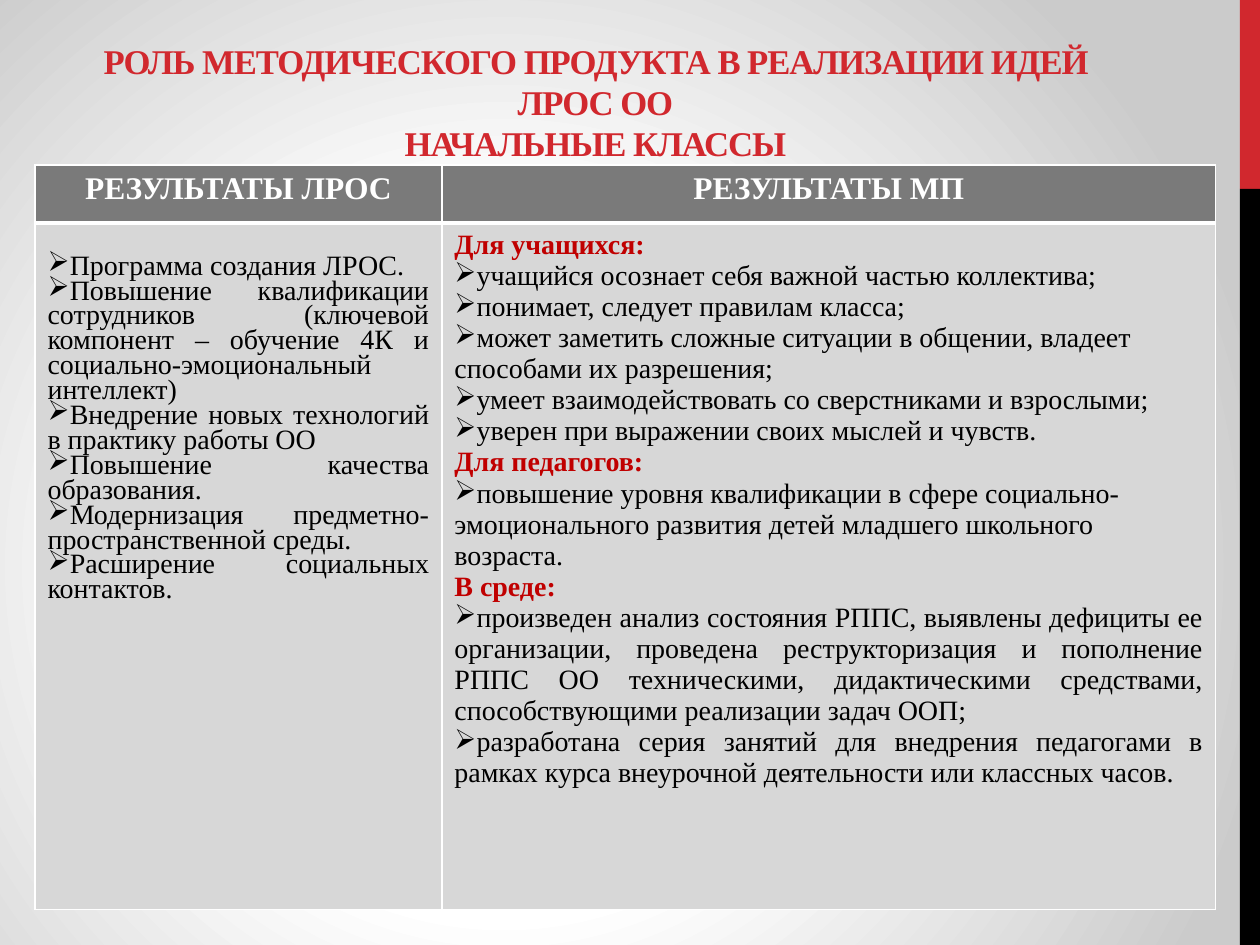
import pptx
import pptx.util
import pptx.dml.color
import pptx.enum.text
import pptx.enum.shapes
import pptx.oxml
import pptx.oxml.ns

Pt = pptx.util.Pt
RGB = pptx.dml.color.RGBColor
ALIGN = pptx.enum.text.PP_ALIGN
qn = pptx.oxml.ns.qn

RED = RGB(0xD1, 0x28, 0x2E)
DEEP = RGB(0xC0, 0x00, 0x00)
BLACK = RGB(0, 0, 0)
WHITE = RGB(0xFF, 0xFF, 0xFF)
GREY = RGB(0x7A, 0x7A, 0x7A)
PALE = RGB(0xD7, 0xD7, 0xD7)
EDGE = RGB(0xCB, 0xCB, 0xCB)
NS = pptx.oxml.ns.nsdecls("a")

FONT = {"name": "Times New Roman"}
TITLE = {**FONT, "size": Pt(19.8), "bold": True}
HEAD = {**FONT, "size": Pt(18), "bold": True}
LABEL = {**FONT, "size": Pt(16), "bold": True}
BODY = {**FONT, "size": Pt(16), "bold": False}

AIMS = [
    "Программа создания ЛРОС.",
    "Повышение квалификации сотрудников (ключевой компонент – обучение 4К "
    "и социально-эмоциональный интеллект)",
    "Внедрение новых технологий в практику работы ОО",
    "Повышение качества образования.",
    "Модернизация предметно-пространственной среды.",
    "Расширение социальных контактов.",
]
# Label, alignment, bulleted items
GROUPS = [
    ("Для учащихся:", ALIGN.LEFT, [
        "учащийся осознает себя важной частью коллектива;",
        "понимает, следует правилам класса;",
        "может заметить сложные ситуации в общении, владеет способами "
        "их разрешения;",
        "умеет взаимодействовать со сверстниками и взрослыми;",
        "уверен при выражении своих мыслей и чувств.",
    ]),
    ("Для педагогов:", ALIGN.LEFT, [
        "повышение уровня квалификации в сфере социально- эмоционального "
        "развития детей младшего школьного возраста.",
    ]),
    ("В среде:", ALIGN.JUSTIFY, [
        "произведен анализ состояния РППС, выявлены дефициты ее организации, "
        "проведена реструкторизация и пополнение РППС ОО техническими, "
        "дидактическими средствами, способствующими реализации задач ООП;",
        "разработана серия занятий для внедрения педагогами в рамках курса "
        "внеурочной деятельности или классных часов.",
    ]),
]


def set_all(item, values):
    for key, value in values.items():
        setattr(item, key, value)


def add_para(frame, text, font, color, align, space=None, bullet=False):
    first = frame.paragraphs[0]
    para = frame.add_paragraph() if first.text else first
    para.text = text
    set_all(para, {"alignment": align, "line_spacing": space})
    for run in para.runs:
        set_all(run.font, font)
        run.font.color.rgb = color
    if bullet:
        props = para._p.get_or_add_pPr()
        props.set("marL", "0")
        props.set("indent", "0")
        props.append(pptx.oxml.parse_xml(f'<a:buChar {NS} char="➢"/>'))
    return para


def paint_back(slide):
    fill = slide.background.fill
    fill.gradient()
    grad = slide.background._cSld.find(".//" + qn("a:gradFill"))
    for child in list(grad):
        grad.remove(child)
    stops = "".join(
        f'<a:gs pos="{pos}"><a:srgbClr val="{color}"/></a:gs>'
        for pos, color in ((0, WHITE), (44000, WHITE), (100000, EDGE)))
    grad.append(pptx.oxml.parse_xml(f"<a:gsLst {NS}>{stops}</a:gsLst>"))
    grad.append(pptx.oxml.parse_xml(
        f'<a:path {NS} path="circle"><a:fillToRect l="40000" t="60000" '
        'r="60000" b="40000"/></a:path>'))


def add_bar(slide, top, height, color):
    bar = slide.shapes.add_shape(
        pptx.enum.shapes.MSO_SHAPE.RECTANGLE,
        Pt(708.5), Pt(top), Pt(11.5), Pt(height))
    bar.shadow.inherit = False
    bar.fill.solid()
    bar.fill.fore_color.rgb = color
    bar.line.fill.background()


def add_title(slide):
    box = slide.shapes.add_textbox(Pt(36.7), Pt(0), Pt(607), Pt(139.7))
    frame = box.text_frame
    set_all(frame, {"word_wrap": True, "margin_bottom": Pt(46),
                    "vertical_anchor": pptx.enum.text.MSO_ANCHOR.BOTTOM})
    para = add_para(
        frame, "РОЛЬ МЕТОДИЧЕСКОГО ПРОДУКТА В РЕАЛИЗАЦИИ ИДЕЙ ЛРОС ОО\v"
        "НАЧАЛЬНЫЕ КЛАССЫ", TITLE, RED, ALIGN.CENTER, Pt(23.7))
    for run in para.runs:
        run._r.get_or_add_rPr().set("spc", "-60")


def style_cell(cell, color, top, bottom):
    props = cell._tc.get_or_add_tcPr()
    for side, width in (("L", 1), ("R", 1), ("T", top), ("B", bottom)):
        props.append(pptx.oxml.parse_xml(
            f'<a:ln{side} {NS} w="{Pt(width)}"><a:solidFill>'
            f'<a:srgbClr val="{WHITE}"/></a:solidFill></a:ln{side}>'))
    cell.fill.solid()
    cell.fill.fore_color.rgb = color


def add_grid(slide):
    grid = slide.shapes.add_table(
        2, 2, Pt(20), Pt(94.3), Pt(674.7), Pt(425.5)).table
    for col, width in zip(grid.columns, (232.5, 442.2)):
        col.width = Pt(width)
    for row, height in zip(grid.rows, (33.1, 392.4)):
        row.height = Pt(height)

    # Header row
    for col, text in enumerate(("РЕЗУЛЬТАТЫ ЛРОС", "РЕЗУЛЬТАТЫ МП")):
        cell = grid.cell(0, col)
        style_cell(cell, GREY, 1, 3)
        add_para(cell.text_frame, text, HEAD, WHITE, ALIGN.CENTER)
        style_cell(grid.cell(1, col), PALE, 3, 1)

    # Left column
    left = grid.cell(1, 0)
    left.margin_top = Pt(18.5)
    for text in AIMS:
        add_para(left.text_frame, text, BODY, BLACK, ALIGN.JUSTIFY, 0.8, True)

    # Right column
    frame = grid.cell(1, 1).text_frame
    for label, align, items in GROUPS:
        add_para(frame, label, LABEL, DEEP, align)
        for text in items:
            add_para(frame, text, BODY, BLACK, align, bullet=True)


def main():
    deck = pptx.Presentation()
    set_all(deck, {"slide_width": Pt(720), "slide_height": Pt(540)})
    slide = deck.slides.add_slide(deck.slide_layouts[6])
    paint_back(slide)
    # Side stripe
    add_bar(slide, 0, 108, RED)
    add_bar(slide, 108, 432, BLACK)
    add_title(slide)
    add_grid(slide)
    deck.save("out.pptx")


if __name__ == "__main__":
    main()
